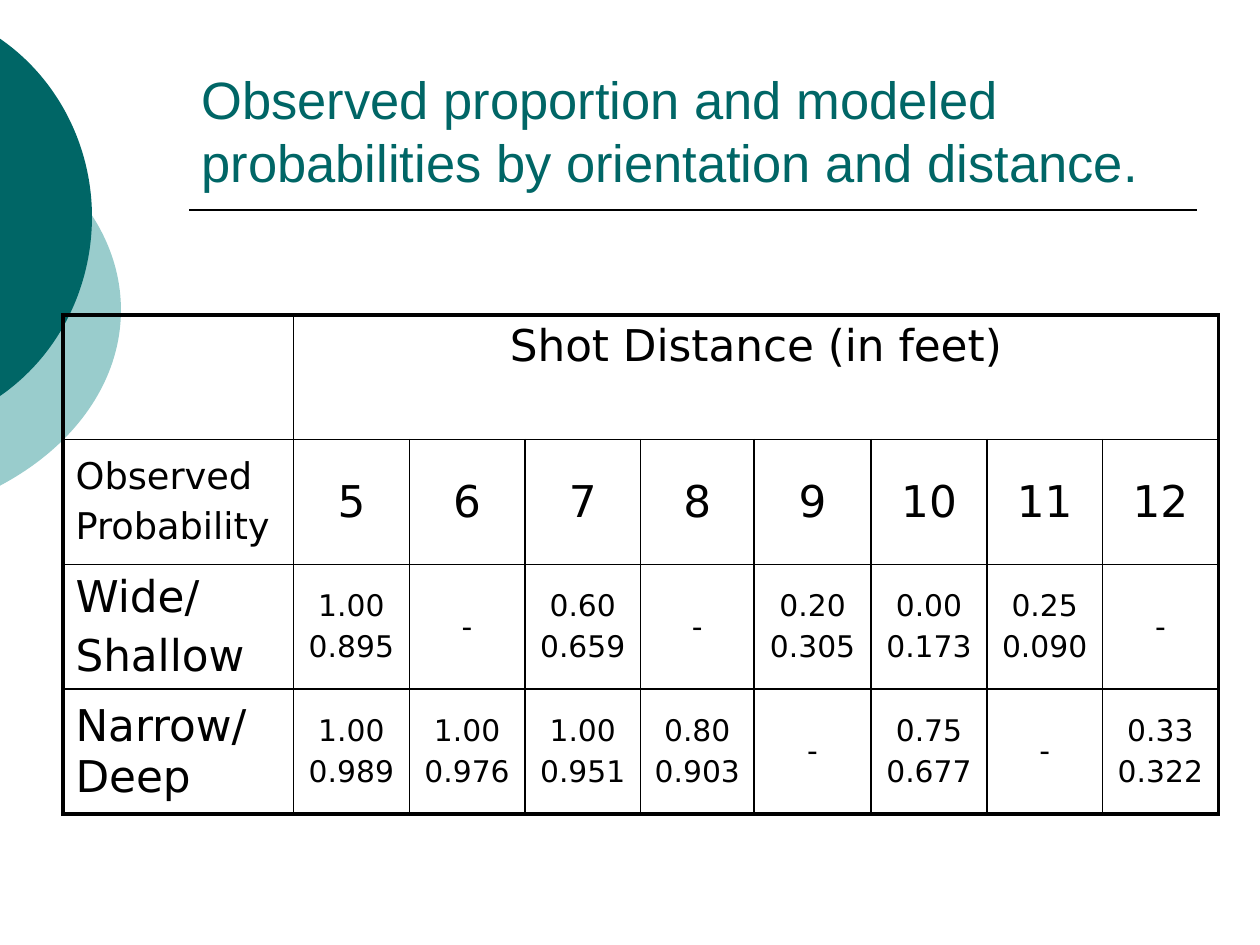
from lxml.etree import SubElement
from pptx import Presentation
from pptx.dml.color import RGBColor
from pptx.enum.shapes import MSO_CONNECTOR
from pptx.enum.text import MSO_ANCHOR, MSO_AUTO_SIZE, PP_ALIGN
from pptx.oxml.ns import qn
from pptx.util import Inches, Pt

BLACK, TEAL, PALE_TEAL = "000000", "006666", "99CCCC"


def color(hex_string):
    return RGBColor.from_string(hex_string)


def add_border(cell, side, points):
    line = SubElement(cell._tc.get_or_add_tcPr(), qn(f"a:ln{side}"), w=str(Pt(points)))
    fill = SubElement(line, qn("a:solidFill"))
    SubElement(fill, qn("a:srgbClr"), val=BLACK)


deck = Presentation()
deck.slide_width, deck.slide_height = Inches(10), Inches(7.5)
slide = deck.slides.add_slide(deck.slide_layouts[5])

# Two discs cut off by the left edge, in hundredths of an inch:
# frame (left, top, width, height), then the start and two curves of the arc
for (left, top, width, height), start, curves, shade in (
    ((-354, 75, 450, 342), (-1, 106),
     [[(60, 138), (96, 190), (96, 246)], [(96, 302), (60, 354), (-1, 386)]], PALE_TEAL),
    ((-265, 0, 338, 345), (-1, 30),
     [[(46, 62), (73, 116), (73, 172)], [(73, 229), (46, 283), (-1, 315)]], TEAL),
):
    right, bottom = left + width, top + height
    frame = slide.shapes.build_freeform(left, top, scale=Inches(0.01))
    frame.add_line_segments([(right, top), (right, bottom), (left, bottom)])
    disc = frame.convert_to_shape()
    arc = next(disc._element.iter(qn("a:path")))
    for step in list(arc):
        arc.remove(step)
    for command, points in [("moveTo", [start])] + [("cubicBezTo", c) for c in curves]:
        step = SubElement(arc, qn(f"a:{command}"))
        for x, y in points:
            SubElement(step, qn("a:pt"), x=str(x - left), y=str(y - top))
    SubElement(arc, qn("a:close"))
    disc.shadow.inherit = False
    disc.fill.solid()
    disc.fill.fore_color.rgb = color(shade)
    disc.line.fill.background()

# Title and the rule below it
title = slide.shapes.title
title.left, title.top, title.width, title.height = map(Inches, (1.5, 0.33, 7.7, 1.25))
heading = title.text_frame
heading.word_wrap = True
heading.auto_size = MSO_AUTO_SIZE.NONE
heading.vertical_anchor = MSO_ANCHOR.BOTTOM
heading.paragraphs[0].alignment = PP_ALIGN.LEFT
run = heading.paragraphs[0].add_run()
run.text = "Observed proportion and modeled probabilities by orientation and distance."
run.font.name, run.font.size = "Arial", Pt(30)
run.font.color.rgb = color(TEAL)

rule_y = deck.slide_height * 2 // 9
rule = slide.shapes.add_connector(
    MSO_CONNECTOR.STRAIGHT, Inches(1.5), rule_y, Inches(9.5), rule_y
)
rule.line.width = Pt(1)
rule.line.color.rgb = color(BLACK)
SubElement(rule._element.spPr, qn("a:effectLst"))

# Table contents: one tuple of paragraphs per cell
missing = ("-",)
content = [
    [(), ("Shot Distance (in feet)",)] + [()] * 7,
    [("Observed", "Probability")] + [(str(feet),) for feet in range(5, 13)],
    [("Wide/", "Shallow"), ("1.00", "0.895"), missing, ("0.60", "0.659"), missing,
     ("0.20", "0.305"), ("0.00", "0.173"), ("0.25", "0.090"), missing],
    [("Narrow/Deep",), ("1.00", "0.989"), ("1.00", "0.976"), ("1.00", "0.951"),
     ("0.80", "0.903"), missing, ("0.75", "0.677"), missing, ("0.33", "0.322")],
]
label_sizes = (25, 21, 25, 25)
value_sizes = (25, 25, 17, 17)
rows, columns = len(content), len(content[0])
table_width, row_height = 9.17, 0.99
special_widths = {0: 1.83, 4: 0.9, 5: 0.93}
shared_width = (table_width - sum(special_widths.values())) / (columns - len(special_widths))

table = slide.shapes.add_table(
    rows, columns, Inches(0.5), Inches(2.5), Inches(table_width), Inches(rows * row_height)
).table
table.first_row = table.horz_banding = False
for c, column in enumerate(table.columns):
    column.width = Inches(special_widths.get(c, shared_width))
table.cell(0, 1).merge(table.cell(0, columns - 1))

# Cells: thick outer frame, thin inner grid
for r, row in enumerate(content):
    for c, paragraphs in enumerate(row):
        cell = table.cell(r, c)
        reaches_right = c == columns - 1 or cell.is_merge_origin
        outer_sides = {"L": c == 0, "R": reaches_right, "T": r == 0, "B": r == rows - 1}
        for side, is_outer in outer_sides.items():
            add_border(cell, side, 2.25 if is_outer else 1)
        cell.fill.background()
        cell.vertical_anchor = MSO_ANCHOR.MIDDLE if r else MSO_ANCHOR.TOP
        size = value_sizes[r] if c else label_sizes[r]
        for p, text in enumerate(paragraphs):
            frame = cell.text_frame
            paragraph = frame.add_paragraph() if p else frame.paragraphs[0]
            paragraph.alignment = PP_ALIGN.CENTER if c else PP_ALIGN.LEFT
            paragraph.space_before = Pt(size * 0.2)
            run = paragraph.add_run()
            run.text = text
            run.font.name, run.font.size = "DejaVu Sans", Pt(size)
            run.font.color.rgb = color(BLACK)

deck.save("out.pptx")
